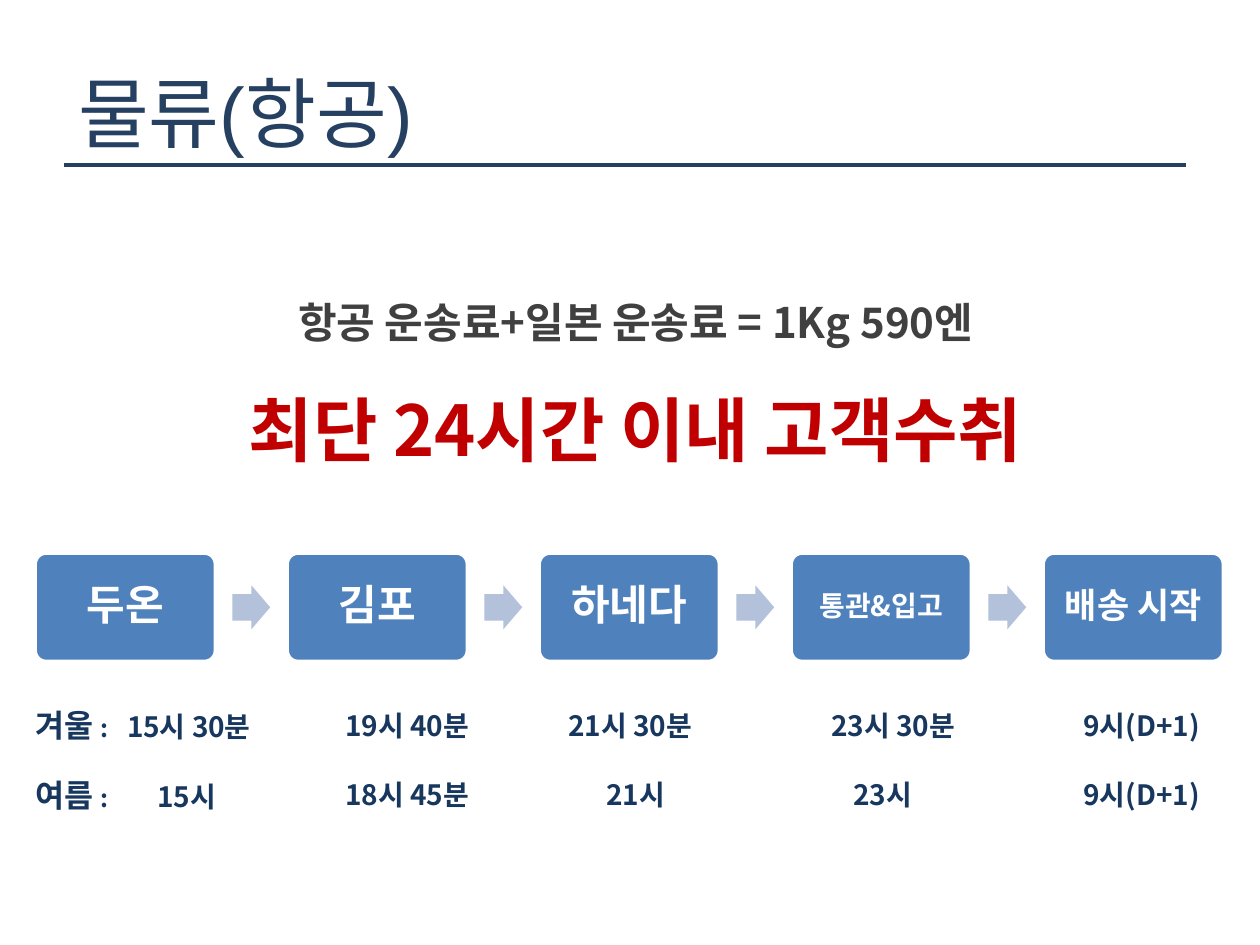
from lxml.etree import SubElement
from pptx import Presentation
from pptx.dml.color import RGBColor
from pptx.enum.shapes import MSO_CONNECTOR as CONN, MSO_SHAPE as SHAPE
from pptx.enum.text import MSO_ANCHOR as ANCHOR, MSO_AUTO_SIZE as AUTO, PP_ALIGN as ALIGN
from pptx.oxml.ns import qn
from pptx.util import Inches, Pt

NAVY, DARK, BLUE, PALE, WHITE = "254061", "17375E", "4F81BD", "B3C1DB", "FFFFFF"
KOREAN = "Noto Sans CJK KR"


def rgb(code):
    return RGBColor.from_string(code)


def write(sp, *runs, color=DARK, font=KOREAN, bold=True, align=ALIGN.CENTER,
          inset=0.1, new=False):
    """Write (text, size) runs into one paragraph of a shape."""
    tf = sp.text_frame
    tf.word_wrap, tf.auto_size = True, AUTO.NONE
    tf.vertical_anchor = ANCHOR.MIDDLE
    tf.margin_left = tf.margin_right = Inches(inset)
    p = tf.add_paragraph() if new else tf.paragraphs[0]
    p.alignment = align
    p.space_before = Pt(0)
    for text, size in runs:
        r = p.add_run()
        r.text = text
        r.font.name, r.font.size, r.font.bold = font, Pt(size), bold
        r.font.color.rgb = rgb(color)
        SubElement(r.font._element, qn("a:ea"), typeface=KOREAN)
    return p


prs = Presentation()
prs.slide_width, prs.slide_height = Inches(10), Inches(7.5)
s = prs.slides.add_slide(prs.slide_layouts[1])
title, body = s.placeholders

# Title and rule
title.left, title.top, title.width, title.height = map(Inches, (0.52, 0.45, 5.12, 0.87))
write(title, ("물류(항공)", 44), color=NAVY, font="Arial", bold=False, align=ALIGN.LEFT)
rule = s.shapes.add_connector(CONN.STRAIGHT, Inches(0.51), Inches(1.31), Inches(9.41), Inches(1.31))
rule.line.color.rgb, rule.line.width = rgb(NAVY), Pt(2.25)
SubElement(rule._element.spPr, qn("a:effectLst"))

# Key message
body.left, body.top, body.width, body.height = map(Inches, (1.54, 2.1, 7.01, 1.89))
cost = write(body, ("항공 운송료+일본 운송료 = 1Kg 590엔", 24), color="404040")
promise = write(body, ("최단 24시간 이내 고객수취", 40), color="C00000", new=True)
promise.space_before = Pt(23)
for p in (cost, promise):
    pPr = p._p.get_or_add_pPr()
    pPr.set("marL", "0")
    pPr.set("indent", "0")
    SubElement(pPr, qn("a:buNone"))

# Route: five steps on an even pitch, with an arrow in each gap
LEFT, PITCH, TOP, STEP_W, STEP_H = 0.28, 2.0, 4.39, 1.43, 0.86
ARROW_W, ARROW_H = 0.3, 0.35
steps = [("두온", 24), ("김포", 24), ("하네다", 24), ("통관&입고", 16), ("배송 시작", 20)]
for i, step in enumerate(steps):
    x = LEFT + i * PITCH
    box = s.shapes.add_shape(SHAPE.ROUNDED_RECTANGLE, *map(Inches, (x, TOP, STEP_W, STEP_H)))
    box.adjustments[0] = 0.1
    box.shadow.inherit = False
    box.fill.solid()
    box.fill.fore_color.rgb = rgb(BLUE)
    box.line.color.rgb, box.line.width = rgb(WHITE), Pt(2)
    write(box, step, color=WHITE).line_spacing = 0.9
    if i < len(steps) - 1:
        arrow = s.shapes.add_shape(SHAPE.RIGHT_ARROW, *map(Inches, (
            x + (STEP_W + PITCH - ARROW_W) / 2, TOP + (STEP_H - ARROW_H) / 2, ARROW_W, ARROW_H)))
        arrow.adjustments[0] = 0.6
        arrow.shadow.inherit = False
        arrow.fill.solid()
        arrow.fill.fore_color.rgb = rgb(PALE)
        arrow.line.fill.background()

# Timetable: season, top, first time and its tab stop, then (time, left, width)
ROW_H = 0.39
seasons = [
    ("겨울", 5.56, "15시 30분", 0.73, [("19시 40분", 2.56, 1.34), ("21시 30분", 4.29, 1.42),
                                    ("23시 30분", 6.42, 1.34), ("9시(D+1)", 8.39, 1.34)]),
    ("여름", 6.11, "15시", 0.97, [("18시 45분", 2.48, 1.5), ("21시", 4.61, 0.87),
                                ("23시", 6.57, 0.87), ("9시(D+1)", 8.39, 1.34)]),
]
for season, top, start, stop, times in seasons:
    label = s.shapes.add_textbox(*map(Inches, (0.18, top, 2.22, ROW_H)))
    p = write(label, (season + " ", 18), (":\t", 14), (start, 16), align=ALIGN.LEFT)
    tabs = SubElement(p._p.get_or_add_pPr(), qn("a:tabLst"))
    SubElement(tabs, qn("a:tab"), pos=str(Inches(stop)), algn="l")
    for time, x, width in times:
        write(s.shapes.add_textbox(*map(Inches, (x, top, width, ROW_H))), (time, 16))

prs.save("out.pptx")
